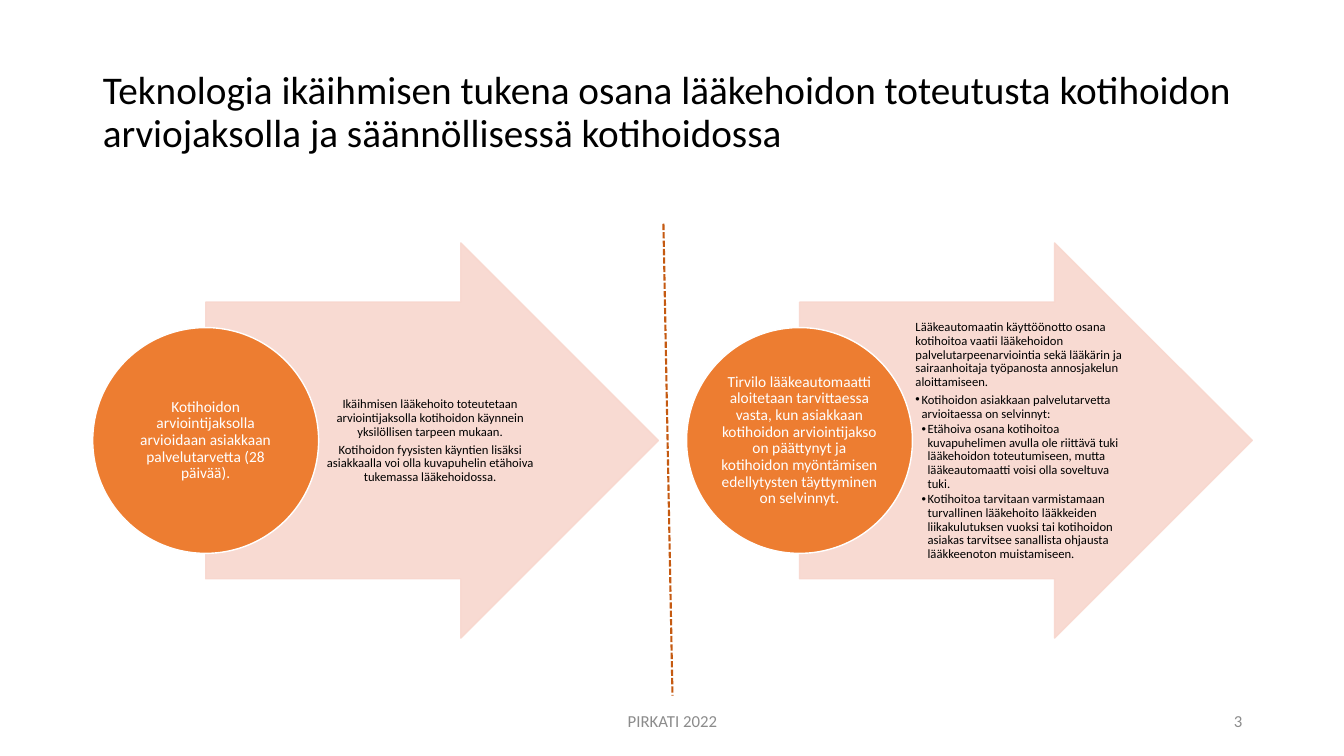
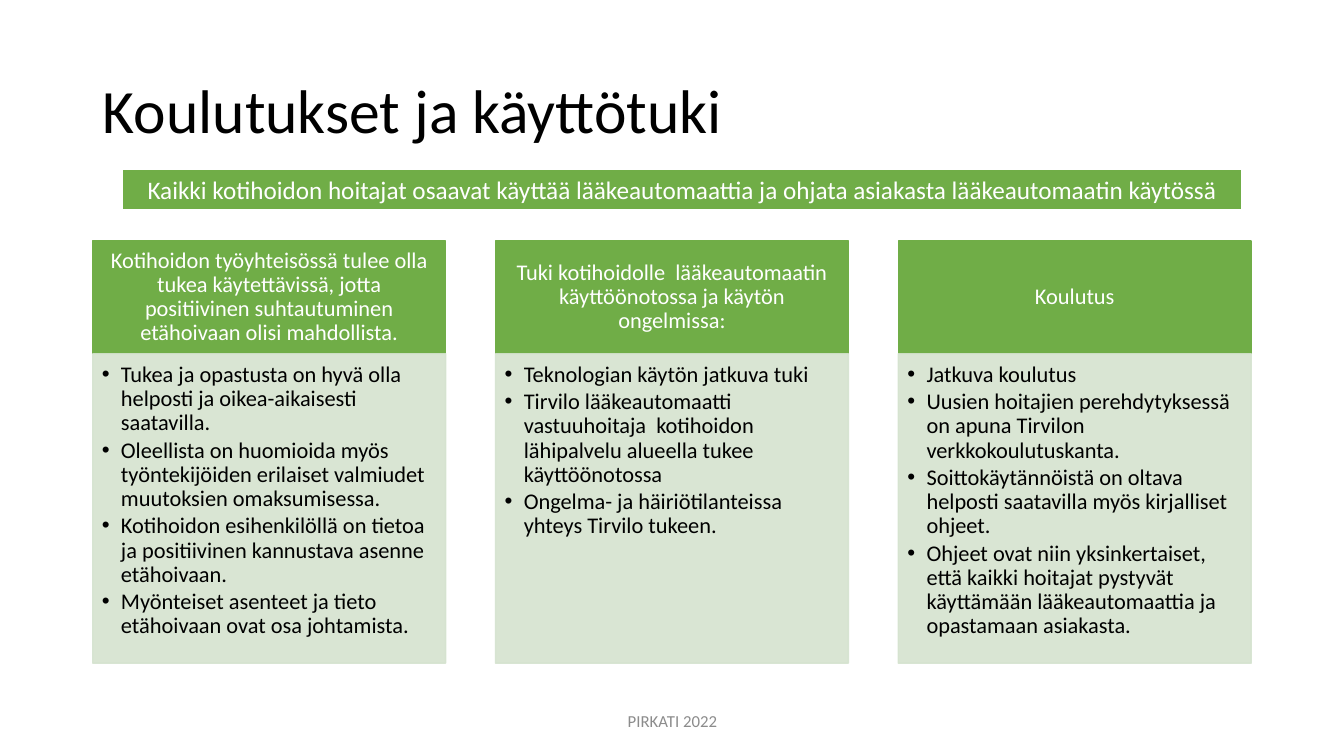
from lxml import etree
from pptx import Presentation
from pptx.dml.color import RGBColor
from pptx.enum.dml import MSO_LINE
from pptx.enum.shapes import MSO_CONNECTOR, MSO_SHAPE
from pptx.enum.text import MSO_ANCHOR, MSO_AUTO_SIZE, PP_ALIGN
from pptx.oxml.ns import qn
from pptx.util import Inches, Pt

LEFT, MID, RIGHT = PP_ALIGN.LEFT, PP_ALIGN.CENTER, PP_ALIGN.RIGHT
TOP, CENTER = MSO_ANCHOR.TOP, MSO_ANCHOR.MIDDLE
RECT, OVAL, ARROW = MSO_SHAPE.RECTANGLE, MSO_SHAPE.OVAL, MSO_SHAPE.RIGHT_ARROW
STRAIGHT = MSO_CONNECTOR.STRAIGHT
DASH = MSO_LINE.SQUARE_DOT
NO_FIT = MSO_AUTO_SIZE.NONE

FONT = "Calibri"
HUES = {
    "black": "000000",
    "white": "FFFFFF",
    "gray": "8C8C8C",
    "orange": "ED7D31",
    "rust": "C55A11",
    "peach": "F8D7CE",
    "green": "70AD47",
    "mint": "D5E3CF",
}
COLOR = {name: RGBColor.from_string(hue) for name, hue in HUES.items()}


def write(shape, rows, size, hue, align=LEFT, anchor=CENTER,
          pads=(0.1, 0.05, 0.1, 0.05), gap=0, step=0, lead=0.9):
    frame = shape.text_frame
    frame.word_wrap = True
    frame.auto_size = NO_FIT
    frame.vertical_anchor = anchor
    (frame.margin_left, frame.margin_top,
     frame.margin_right, frame.margin_bottom) = [Inches(pad) for pad in pads]
    for i, (text, level) in enumerate(rows):
        para = frame.add_paragraph() if i else frame.paragraphs[0]
        para.alignment = align
        para.line_spacing = lead
        para.space_before = Pt(0)
        para.space_after = Pt(size * (0.15 if level else gap))
        if level:
            props = para._p.get_or_add_pPr()
            props.set("marL", str(Inches(level * step)))
            props.set("indent", str(-Inches(step)))
            etree.SubElement(props, qn("a:buFont")).set("typeface", "Arial")
            etree.SubElement(props, qn("a:buChar")).set("char", "•")
        run = para.add_run()
        run.text = text
        run.font.name = FONT
        run.font.size = Pt(size)
        run.font.color.rgb = COLOR[hue]


def draw(slide, kind, spot, fill, edge, width=1, alpha=100):
    shape = slide.shapes.add_shape(kind, *[Inches(n) for n in spot])
    shape.shadow.inherit = False
    shape.fill.solid()
    shape.fill.fore_color.rgb = COLOR[fill]
    shape.line.color.rgb = COLOR[edge]
    shape.line.width = Pt(width)
    if alpha < 100:
        for tone in shape._element.spPr.iter(qn("a:srgbClr")):
            etree.SubElement(tone, qn("a:alpha")).set("val", str(alpha * 1000))
    return shape


deck = Presentation()
deck.slide_width = Inches(13.33)
deck.slide_height = Inches(7.5)

heads = [
    ("Teknologia ikäihmisen tukena osana lääkehoidon toteutusta "
     "kotihoidon arviojaksolla ja säännöllisessä kotihoidossa", 28),
    ("Koulutukset ja käyttötuki", 44),
]
foot = (4.42, 4.5, "PIRKATI 2022", MID)
number = (9.42, 3, "3", RIGHT)
feet = [[foot, number], [foot]]

for (head, size), notes in zip(heads, feet):
    slide = deck.slides.add_slide(deck.slide_layouts[5])
    title = slide.shapes.title
    title.left, title.top = Inches(0.92), Inches(0.4)
    title.width, title.height = Inches(11.5), Inches(1.45)
    write(title, [(head, 0)], size, "black")
    for x, wide, text, align in notes:
        box = slide.shapes.add_textbox(
            Inches(x), Inches(6.95), Inches(wide), Inches(0.4))
        write(box, [(text, 0)], 12, "gray", align, lead=1)

flow, train = deck.slides

stages = [
    ("Kotihoidon arviointijaksolla arvioidaan asiakkaan palvelutarvetta "
     "(28 päivää).", MID, [
         ("Ikäihmisen lääkehoito toteutetaan arviointijaksolla kotihoidon "
          "käynnein yksilöllisen tarpeen mukaan.", 0),
         ("Kotihoidon fyysisten käyntien lisäksi asiakkaalla voi olla "
          "kuvapuhelin etähoiva tukemassa lääkehoidossa.", 0),
     ]),
    ("Tirvilo lääkeautomaatti aloitetaan tarvittaessa vasta, kun asiakkaan "
     "kotihoidon arviointijakso on päättynyt ja kotihoidon myöntämisen "
     "edellytysten täyttyminen on selvinnyt.", LEFT, [
         ("Lääkeautomaatin käyttöönotto osana kotihoitoa vaatii lääkehoidon "
          "palvelutarpeenarviointia sekä lääkärin ja sairaanhoitaja "
          "työpanosta annosjakelun aloittamiseen.", 0),
         ("Kotihoidon asiakkaan palvelutarvetta arvioitaessa on "
          "selvinnyt:", 1),
         ("Etähoiva osana kotihoitoa kuvapuhelimen avulla ole riittävä tuki "
          "lääkehoidon toteutumiseen, mutta lääkeautomaatti voisi olla "
          "soveltuva tuki.", 2),
         ("Kotihoitoa tarvitaan varmistamaan turvallinen lääkehoito "
          "lääkkeiden liikakulutuksen vuoksi tai kotihoidon asiakas "
          "tarvitsee sanallista ohjausta lääkkeenoton muistamiseen.", 2),
     ]),
]
for i, (label, align, rows) in enumerate(stages):
    x = 0.92 + i * 5.89
    arrow = draw(flow, ARROW, (x + 1.12, 2.41, 4.49, 3.92),
                 "peach", "peach", alpha=90)
    arrow.adjustments[0] = 0.7
    arrow.adjustments[1] = 0.5
    box = flow.shapes.add_textbox(
        Inches(x + 2.24), Inches(3), Inches(2.19), Inches(2.75))
    write(box, rows, 9, "black", align,
          pads=(0.03, 0.01, 0.01, 0.01), gap=0.35, step=0.06)
    disc = draw(flow, OVAL, (x, 3.25, 2.24, 2.24), "orange", "white")
    write(disc, [(label, 0)], 11, "white", MID, pads=[0.01] * 4, gap=0.35)

line = flow.shapes.add_connector(
    STRAIGHT, Inches(6.58), Inches(2.22), Inches(6.67), Inches(6.9))
line.line.color.rgb = COLOR["rust"]
line.line.width = Pt(1.5)
line.line.dash_style = DASH
etree.SubElement(line._element.spPr, qn("a:effectLst"))

themes = [
    ("Kotihoidon työyhteisössä tulee olla tukea käytettävissä, jotta "
     "positiivinen suhtautuminen etähoivaan olisi mahdollista.", [
         "Tukea ja opastusta on hyvä olla helposti ja oikea-aikaisesti "
         "saatavilla.",
         "Oleellista on huomioida myös työntekijöiden erilaiset valmiudet "
         "muutoksien omaksumisessa.",
         "Kotihoidon esihenkilöllä on tietoa ja positiivinen kannustava "
         "asenne etähoivaan.",
         "Myönteiset asenteet ja tieto etähoivaan ovat osa johtamista.",
     ]),
    ("Tuki kotihoidolle  lääkeautomaatin käyttöönotossa ja käytön "
     "ongelmissa:", [
         "Teknologian käytön jatkuva tuki",
         "Tirvilo lääkeautomaatti vastuuhoitaja  kotihoidon lähipalvelu "
         "alueella tukee käyttöönotossa",
         "Ongelma- ja häiriötilanteissa yhteys Tirvilo tukeen.",
     ]),
    ("Koulutus", [
        "Jatkuva koulutus",
        "Uusien hoitajien perehdytyksessä on apuna Tirvilon "
        "verkkokoulutuskanta.",
        "Soittokäytännöistä on oltava helposti saatavilla myös kirjalliset "
        "ohjeet.",
        "Ohjeet ovat niin yksinkertaiset, että kaikki hoitajat pystyvät "
        "käyttämään lääkeautomaattia ja opastamaan asiakasta.",
    ]),
]
wide = 3.5
pitch = (11.49 - wide) / (len(themes) - 1)
for i, (label, points) in enumerate(themes):
    x = 0.92 + i * pitch
    top = draw(train, RECT, (x, 2.39, wide, 1.12), "green", "green")
    write(top, [(label, 0)], 16, "white", MID,
          pads=(0.12, 0.07, 0.12, 0.07), gap=0.35)
    body = draw(train, RECT, (x, 3.51, wide, 3.07), "mint", "mint", alpha=90)
    write(body, [(point, 1) for point in points], 16, "black", LEFT, TOP,
          pads=(0.09, 0.09, 0.12, 0.14), step=0.19)

band = draw(train, RECT, (1.21, 1.68, 11.11, 0.4), "green", "white", 1.5)
write(band, [("Kaikki kotihoidon hoitajat osaavat käyttää lääkeautomaattia ja "
              "ohjata asiakasta lääkeautomaatin käytössä", 0)],
      18, "white", MID, lead=1)

deck.save("out.pptx")
